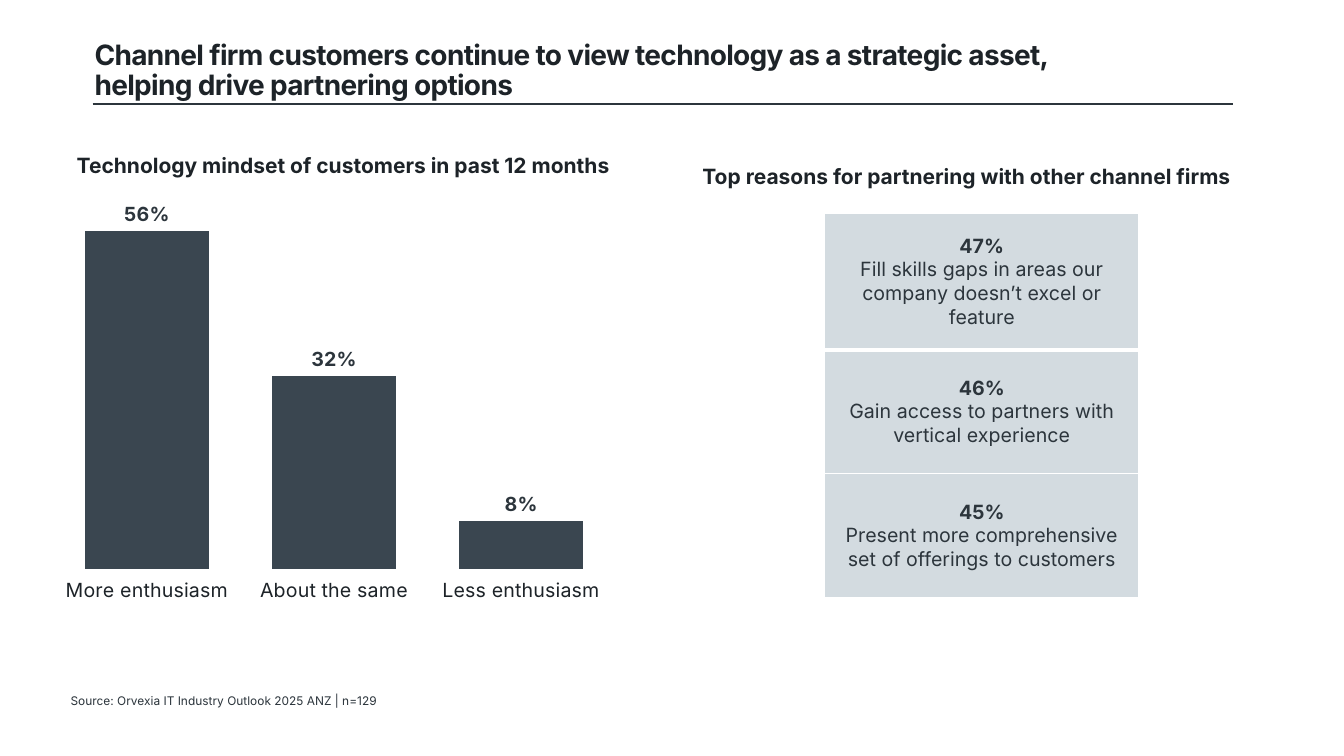
"""Builds a slide on customer technology mindset and reasons for channel partnering."""
from dataclasses import dataclass

from lxml import etree
from pptx import Presentation
from pptx.chart.data import CategoryChartData
from pptx.dml.color import RGBColor
from pptx.enum.chart import XL_CHART_TYPE, XL_LABEL_POSITION, XL_TICK_MARK
from pptx.enum.shapes import MSO_CONNECTOR
from pptx.enum.text import MSO_ANCHOR, PP_ALIGN
from pptx.oxml.ns import qn
from pptx.util import Pt

COLUMNS = XL_CHART_TYPE.COLUMN_CLUSTERED
ABOVE_BAR = XL_LABEL_POSITION.OUTSIDE_END
TICK_OUT, TICK_NONE = XL_TICK_MARK.OUTSIDE, XL_TICK_MARK.NONE
STRAIGHT = MSO_CONNECTOR.STRAIGHT
TOP, MIDDLE = MSO_ANCHOR.TOP, MSO_ANCHOR.MIDDLE
LEFT, CENTER = PP_ALIGN.LEFT, PP_ALIGN.CENTER

TITLE = ("Channel firm customers continue to view technology as a strategic asset, "
         "helping drive partnering options")
MINDSET_HEADING = "Technology mindset of customers in past 12 months"
MINDSET = {"More enthusiasm": 0.56, "About the same": 0.32, "Less enthusiasm": 0.08}
REASONS_HEADING = "Top reasons for partnering with other channel firms"
REASONS = [
    ("47%", "Fill skills gaps in areas our company doesn’t excel or feature"),
    ("46%", "Gain access to partners with vertical experience"),
    ("45%", "Present more comprehensive set of offerings to customers"),
]
SOURCE = "Source: Orvexia IT Industry Outlook 2025 ANZ | n=129"


@dataclass(frozen=True)
class Theme:
    font: str = "Inter"
    chart_font: str = "Roboto"
    ink: str = "1D2328"
    body: str = "2C353C"
    muted: str = "586169"
    bar: str = "3A4650"
    panel: str = "D3DBE0"
    white: str = "FFFFFF"
    title_size: float = 20
    heading_size: float = 15
    label_size: float = 14
    chart_size: float = 18
    source_size: float = 8.5


THEME = Theme()


def rgb(color):
    return RGBColor.from_string(color)


def style_font(font, size, color, bold=False, face=THEME.font):
    font.name, font.size, font.bold = face, Pt(size), bold
    font.color.rgb = rgb(color)


def add_run(paragraph, text, size, color, bold=False):
    run = paragraph.add_run()
    run.text = text
    style_font(run.font, size, color, bold)
    return run


def add_text(slide, box, text, size, color, bold=False, align=LEFT, anchor=TOP):
    frame = slide.shapes.add_textbox(*map(Pt, box)).text_frame
    frame.word_wrap = True
    frame.vertical_anchor = anchor
    paragraph = frame.paragraphs[0]
    paragraph.alignment = align
    return frame, add_run(paragraph, text, size, color, bold)


def add_title(slide):
    frame, run = add_text(slide, (60.5, 25.9, 731.5, 50.4), TITLE,
                          THEME.title_size, THEME.ink, True, anchor=MIDDLE)
    frame.paragraphs[0].line_spacing = 0.9
    run.font._element.set("spc", "-50")
    rule = slide.shapes.add_connector(STRAIGHT, Pt(66.2), Pt(74.2), Pt(880.6), Pt(74.2))
    rule.line.color.rgb = rgb(THEME.body)
    rule.line.width = Pt(1)
    etree.SubElement(rule._element.spPr, qn("a:effectLst"))


def set_plot_area(chart, x, y, w, h):
    plot_area = chart._chartSpace.chart.plotArea
    layout = plot_area.find(qn("c:layout"))
    if layout is None:
        layout = etree.Element(qn("c:layout"))
        plot_area.insert(0, layout)
    manual = etree.SubElement(layout, qn("c:manualLayout"))
    settings = {"layoutTarget": "inner", "xMode": "edge", "yMode": "edge",
                "x": x, "y": y, "w": w, "h": h}
    for tag, value in settings.items():
        etree.SubElement(manual, qn(f"c:{tag}")).set("val", str(value))


def add_mindset_chart(slide):
    data = CategoryChartData(number_format="0%")
    data.categories = list(MINDSET)
    data.add_series("Series 1", list(MINDSET.values()))
    box = map(Pt, (38.2, 144.7, 401, 326.9))
    chart = slide.shapes.add_chart(COLUMNS, *box, data).chart
    chart.has_legend = chart.has_title = False
    style_font(chart.font, THEME.chart_size, THEME.muted, face=THEME.chart_font)
    set_plot_area(chart, 0, 0.03, 1, 0.77)

    answers = chart.category_axis
    answers.major_tick_mark = TICK_OUT
    answers.minor_tick_mark = TICK_NONE
    answers.has_major_gridlines = False
    answers.format.line.fill.background()
    style_font(answers.tick_labels.font, THEME.label_size, THEME.ink)

    share = chart.value_axis
    share.minimum_scale, share.maximum_scale = 0, 0.58
    share.has_major_gridlines = False
    share.visible = False

    plot = chart.plots[0]
    plot.gap_width = 49
    plot.vary_by_categories = False
    bars = plot.series[0]
    bars.format.fill.solid()
    bars.format.fill.fore_color.rgb = rgb(THEME.bar)
    bars.format.line.color.rgb = rgb(THEME.white)
    bars.format.line.width = Pt(0.75)
    labels = bars.data_labels
    labels.show_value = True
    labels.position = ABOVE_BAR
    labels.number_format, labels.number_format_is_linked = "0%", False
    style_font(labels.font, THEME.label_size, THEME.body, True)


def set_borders(cell, widths):
    cell_properties = cell._tc.get_or_add_tcPr()
    for side, width in widths.items():
        border = etree.SubElement(cell_properties, qn(f"a:ln{side}"), w=str(Pt(width)))
        fill = etree.SubElement(border, qn("a:solidFill"))
        etree.SubElement(fill, qn("a:srgbClr"), val=THEME.white)


def add_reasons_table(slide):
    heights = [97.2] + [88.6] * (len(REASONS) - 1)
    box = map(Pt, (589, 152.6, 224.6, sum(heights)))
    table = slide.shapes.add_table(len(REASONS), 1, *box).table
    table.first_row = table.horz_banding = False
    dividers = [1, 3] + [1] * (len(REASONS) - 1)
    for index, (share, reason) in enumerate(REASONS):
        table.rows[index].height = Pt(heights[index])
        cell = table.cell(index, 0)
        set_borders(cell, {"L": 1, "R": 1, "T": dividers[index], "B": dividers[index + 1]})
        cell.fill.solid()
        cell.fill.fore_color.rgb = rgb(THEME.panel)
        cell.vertical_anchor = MIDDLE
        share_line = cell.text_frame.paragraphs[0]
        reason_line = cell.text_frame.add_paragraph()
        for line, text, bold in ((share_line, share, True), (reason_line, reason, False)):
            line.alignment = CENTER
            add_run(line, text, THEME.label_size, THEME.body, bold)


def add_source(slide):
    frame, _ = add_text(slide, (50.4, 493.2, 504, 14.4), SOURCE,
                        THEME.source_size, THEME.body, anchor=MIDDLE)
    frame.margin_left = frame.margin_right = frame.margin_top = frame.margin_bottom = 0


def main():
    deck = Presentation()
    deck.slide_width, deck.slide_height = Pt(960), Pt(540)
    slide = deck.slides.add_slide(deck.slide_layouts[6])
    add_title(slide)
    add_source(slide)
    add_mindset_chart(slide)
    add_reasons_table(slide)
    for heading, box in ((MINDSET_HEADING, (38.2, 105.1, 414, 25.2)),
                         (REASONS_HEADING, (485.3, 113, 410.4, 25.2))):
        add_text(slide, box, heading, THEME.heading_size, THEME.ink, True, CENTER)
    deck.save("out.pptx")


if __name__ == "__main__":
    main()
